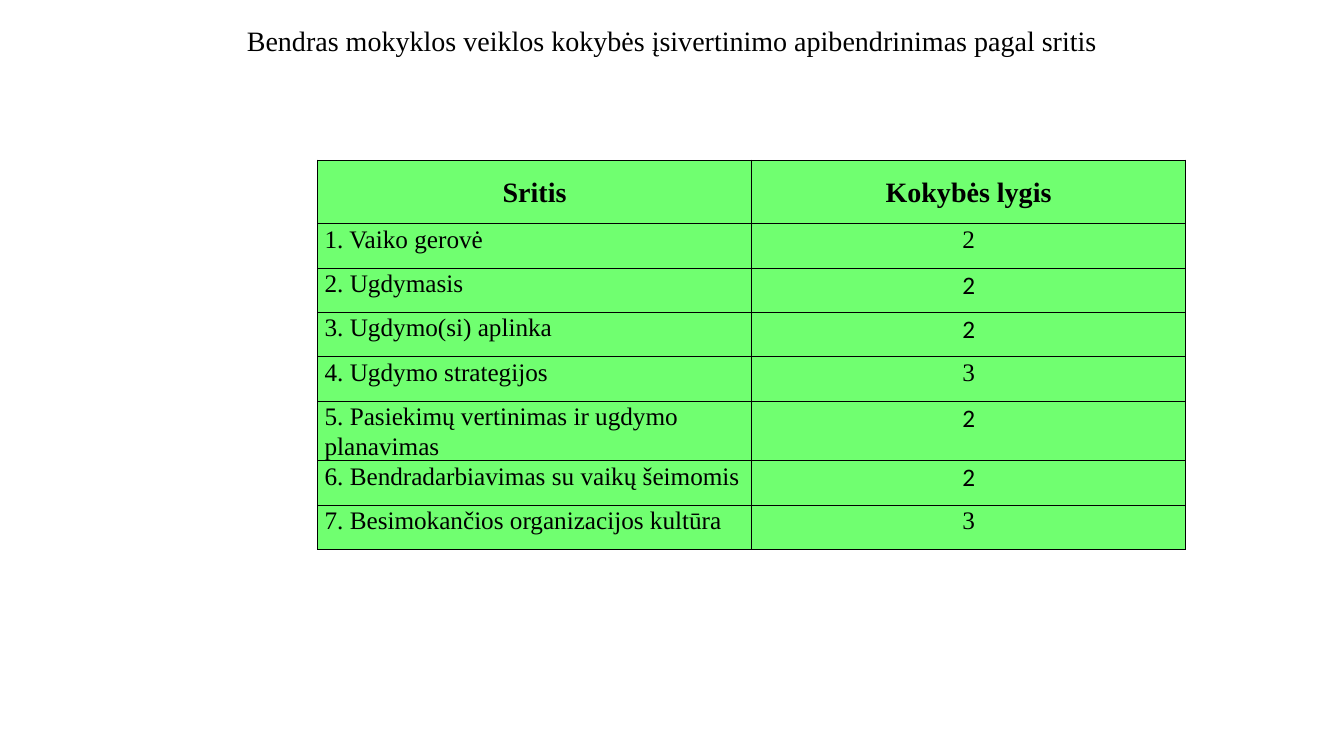
from dataclasses import dataclass

from lxml import etree
from pptx import Presentation
from pptx.dml.color import RGBColor
from pptx.enum.text import MSO_ANCHOR, MSO_AUTO_SIZE, PP_ALIGN
from pptx.oxml.ns import qn
from pptx.table import _Cell
from pptx.text.text import _Paragraph
from pptx.util import Inches, Pt

LEFT, CENTER = PP_ALIGN.LEFT, PP_ALIGN.CENTER
TOP, MIDDLE = MSO_ANCHOR.TOP, MSO_ANCHOR.MIDDLE
FIXED_SIZE = MSO_AUTO_SIZE.NONE
TITLE_ONLY_LAYOUT = 5
SLIDE_WIDTH, SLIDE_HEIGHT = Inches(13.33), Inches(7.5)


@dataclass(frozen=True)
class Theme:
    ink: str = "000000"
    green: str = "70FF70"
    serif: str = "Times New Roman"
    sans: str = "Calibri"
    heading_size: int = 20
    body_size: int = 18
    line_spacing: float = 1.07
    border: float = 1


@dataclass(frozen=True)
class Area:
    name: str
    level: int
    level_font: str


@dataclass(frozen=True)
class Box:
    """Place and size as shares of the slide."""
    left: float
    top: float
    width: float
    height: float

    def emu(self) -> tuple[int, int, int, int]:
        return (int(self.left * SLIDE_WIDTH), int(self.top * SLIDE_HEIGHT),
                int(self.width * SLIDE_WIDTH), int(self.height * SLIDE_HEIGHT))


THEME = Theme()
TITLE_BOX = Box(0.05, 0.028, 0.9, 0.085)
TABLE_BOX = Box(0.2363, 0.212, 0.6459, 0.495)
HEADER_ROW, AREA_ROW = Inches(0.63), Inches(0.44)
TITLE = "Bendras mokyklos veiklos kokybės įsivertinimo apibendrinimas pagal sritis"
HEADINGS = ("Sritis", "Kokybės lygis")
AREAS = (
    Area("1. Vaiko gerovė", 2, THEME.serif),
    Area("2. Ugdymasis", 2, THEME.sans),
    Area("3. Ugdymo(si) aplinka", 2, THEME.sans),
    Area("4. Ugdymo strategijos", 3, THEME.serif),
    Area("5. Pasiekimų vertinimas ir ugdymo planavimas", 2, THEME.sans),
    Area("6. Bendradarbiavimas su vaikų šeimomis", 2, THEME.sans),
    Area("7. Besimokančios organizacijos kultūra", 3, THEME.serif),
)


def write(paragraph: _Paragraph, text: str, size: int, font: str = THEME.serif,
          align: PP_ALIGN = CENTER, bold: bool = False) -> None:
    paragraph.text = text
    paragraph.alignment = align
    for run in paragraph.runs:
        run.font.name = font
        run.font.size = Pt(size)
        run.font.bold = bold
        run.font.color.rgb = RGBColor.from_string(THEME.ink)


def format_cell(cell: _Cell, anchor: MSO_ANCHOR) -> None:
    """Give a cell its margins, borders and fill."""
    cell.vertical_anchor = anchor
    cell.margin_left = cell.margin_right = Inches(0.07)
    cell.margin_top = cell.margin_bottom = 0
    cell.text_frame.paragraphs[0].line_spacing = THEME.line_spacing
    properties = cell._tc.get_or_add_tcPr()
    for side in ("a:lnL", "a:lnR", "a:lnT", "a:lnB"):
        line = etree.SubElement(properties, qn(side), w=str(Pt(THEME.border)))
        fill = etree.SubElement(line, qn("a:solidFill"))
        etree.SubElement(fill, qn("a:srgbClr"), val=THEME.ink)
    cell.fill.solid()
    cell.fill.fore_color.rgb = RGBColor.from_string(THEME.green)


def add_title(slide) -> None:
    title = slide.shapes.title
    title.left, title.top, title.width, title.height = TITLE_BOX.emu()
    frame = title.text_frame
    frame.auto_size = FIXED_SIZE
    frame.word_wrap = True
    frame.vertical_anchor = TOP
    frame.margin_top = Inches(0.02)
    write(frame.paragraphs[0], TITLE, THEME.heading_size)


def add_quality_table(slide) -> None:
    table = slide.shapes.add_table(
        len(AREAS) + 1, len(HEADINGS), *TABLE_BOX.emu()).table
    for cell, heading in zip(table.rows[0].cells, HEADINGS):
        format_cell(cell, MIDDLE)
        write(cell.text_frame.paragraphs[0], heading, THEME.heading_size, bold=True)
    table.rows[0].height = HEADER_ROW
    for row, area in zip(list(table.rows)[1:], AREAS):
        row.height = AREA_ROW
        for cell, text, font, align in zip(
                row.cells, (area.name, str(area.level)),
                (THEME.serif, area.level_font), (LEFT, CENTER)):
            format_cell(cell, TOP)
            write(cell.text_frame.paragraphs[0], text, THEME.body_size, font, align)


def main() -> None:
    deck = Presentation()
    deck.slide_width, deck.slide_height = SLIDE_WIDTH, SLIDE_HEIGHT
    slide = deck.slides.add_slide(deck.slide_layouts[TITLE_ONLY_LAYOUT])
    add_title(slide)
    add_quality_table(slide)
    deck.save("out.pptx")


if __name__ == "__main__":
    main()
